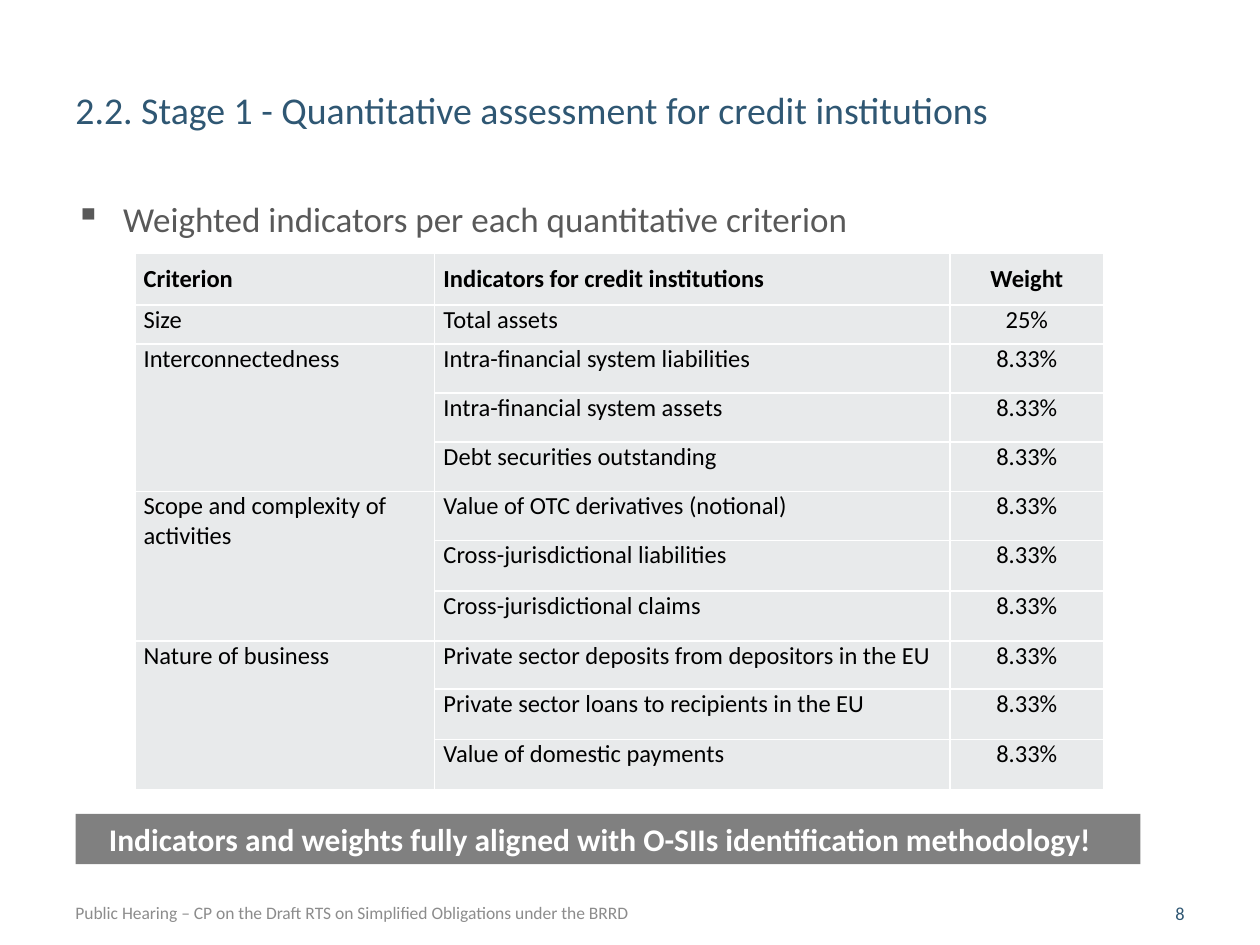
from dataclasses import dataclass

from lxml import etree
from pptx import Presentation
from pptx.dml.color import RGBColor
from pptx.enum import shapes, text
from pptx.oxml import ns
from pptx.util import Inches, Pt

FONT = "Calibri"
NAVY = RGBColor(0x2F, 0x57, 0x73)
DARK_GREY = RGBColor(0x59, 0x59, 0x59)
FOOTER_GREY = RGBColor(0x8C, 0x8C, 0x8C)
BAR_GREY = RGBColor(0x80, 0x80, 0x80)
CELL_GREY = RGBColor(0xE8, 0xEA, 0xEB)
WHITE = RGBColor(0xFF, 0xFF, 0xFF)
BLACK = RGBColor(0, 0, 0)
LEFT, CENTER, RIGHT = text.PP_ALIGN.LEFT, text.PP_ALIGN.CENTER, text.PP_ALIGN.RIGHT


@dataclass
class Label:
    words: str
    left: float
    top: float
    width: float
    height: float
    size: float
    color: RGBColor
    align: text.PP_ALIGN = LEFT


@dataclass
class Criterion:
    name: str
    indicators: list[str]
    weight: str = "8.33%"


TITLE = Label("2.2. Stage 1 - Quantitative assessment for credit institutions",
              0.5, 0.64, 8.15, 0.61, 21.6, NAVY)
LEAD = Label("Weighted indicators per each quantitative criterion",
             0.5, 1.5, 9, 0.5, 20, DARK_GREY)
FOOTER = Label("Public Hearing – CP on the Draft RTS on Simplified Obligations under the BRRD",
               0.5, 7.11, 5.38, 0.24, 10, FOOTER_GREY)
PAGE_NUMBER = Label("8", 8.65, 7.11, 0.85, 0.24, 10.5, NAVY, RIGHT)

HEADINGS = ["Criterion", "Indicators for credit institutions", "Weight"]
CRITERIA = [
    Criterion("Size", ["Total assets"], "25%"),
    Criterion("Interconnectedness", [
        "Intra-financial system liabilities",
        "Intra-financial system assets",
        "Debt securities outstanding"]),
    Criterion("Scope and complexity of activities", [
        "Value of OTC derivatives (notional)",
        "Cross-jurisdictional liabilities",
        "Cross-jurisdictional claims"]),
    Criterion("Nature of business", [
        "Private sector deposits from depositors in the EU",
        "Private sector loans to recipients in the EU",
        "Value of domestic payments"]),
]
COLUMN_WIDTHS = [2.38, 4.09, 1.22]
ROW_HEIGHTS = [0.41, 0.31] + [0.39] * 4 + [0.4, 0.4, 0.38, 0.4, 0.4]


def style(paragraph, size: float, color: RGBColor, bold: bool = False, align=LEFT) -> None:
    paragraph.alignment = align
    font = paragraph.font
    font.name, font.size, font.bold = FONT, Pt(size), bold
    font.color.rgb = color


def add_label(slide, label: Label):
    box = slide.shapes.add_textbox(Inches(label.left), Inches(label.top),
                                   Inches(label.width), Inches(label.height))
    box.text_frame.word_wrap = True
    paragraph = box.text_frame.paragraphs[0]
    paragraph.text = label.words
    style(paragraph, label.size, label.color, align=label.align)
    return paragraph


def add_bulleted_label(slide, label: Label) -> None:
    paragraph = add_label(slide, label)
    paragraph.line_spacing = 1.05
    properties = paragraph._p.get_or_add_pPr()
    properties.set("marL", str(Inches(0.38)))
    properties.set("indent", str(-Inches(0.38)))
    bullet = etree.Element(ns.qn("a:buChar"), char="▪")
    properties.find(ns.qn("a:defRPr")).addprevious(bullet)


def add_borders(cell) -> None:
    properties = cell._tc.get_or_add_tcPr()
    for position, side in enumerate(("lnL", "lnR", "lnT", "lnB")):
        line = etree.Element(ns.qn(f"a:{side}"), w=str(Pt(1)))
        fill = etree.SubElement(line, ns.qn("a:solidFill"))
        etree.SubElement(fill, ns.qn("a:srgbClr"), val=str(WHITE))
        properties.insert(position, line)


def fill_cell(cell, words: str, heading: bool, align) -> None:
    cell.fill.solid()
    cell.fill.fore_color.rgb = CELL_GREY
    cell.margin_left = cell.margin_right = Inches(0.07)
    cell.margin_top = cell.margin_bottom = 0
    cell.vertical_anchor = text.MSO_ANCHOR.MIDDLE if heading else text.MSO_ANCHOR.TOP
    paragraph = cell.text_frame.paragraphs[0]
    paragraph.text = words
    style(paragraph, 14, BLACK, heading, align)
    add_borders(cell)


def add_criteria_table(slide) -> None:
    rows = [HEADINGS]
    for criterion in CRITERIA:
        for i, indicator in enumerate(criterion.indicators):
            rows.append([criterion.name if i == 0 else "", indicator, criterion.weight])

    table = slide.shapes.add_table(
        len(rows), len(HEADINGS), Inches(1.07), Inches(2.01),
        Inches(sum(COLUMN_WIDTHS)), Inches(sum(ROW_HEIGHTS))).table
    for column, width in zip(table.columns, COLUMN_WIDTHS):
        column.width = Inches(width)
    for row, height in zip(table.rows, ROW_HEIGHTS):
        row.height = Inches(height)
    for r, row in enumerate(rows):
        for c, words in enumerate(row):
            fill_cell(table.cell(r, c), words, r == 0, CENTER if c == 2 else LEFT)

    # Each criterion spans the rows of its indicators
    first = 1
    for criterion in CRITERIA:
        last = first + len(criterion.indicators) - 1
        if last > first:
            table.cell(first, 0).merge(table.cell(last, 0))
        first = last + 1


def add_conclusion(slide) -> None:
    bar = slide.shapes.add_shape(shapes.MSO_SHAPE.RECTANGLE, Inches(0.6), Inches(6.46),
                                 Inches(8.45), Inches(0.4))
    bar.shadow.inherit = False
    bar.fill.solid()
    bar.fill.fore_color.rgb = BAR_GREY
    bar.line.fill.background()
    frame = bar.text_frame
    frame.word_wrap = True
    frame.margin_right = Inches(0.22)
    frame.vertical_anchor = text.MSO_ANCHOR.MIDDLE
    paragraph = frame.paragraphs[0]
    paragraph.text = "Indicators and weights fully aligned with O-SIIs identification methodology!"
    style(paragraph, 18, WHITE, True, CENTER)


def main() -> None:
    deck = Presentation()
    deck.slide_width, deck.slide_height = Inches(10), Inches(7.5)
    slide = deck.slides.add_slide(deck.slide_layouts[6])

    # Title, lead line and footer
    add_label(slide, TITLE)
    add_bulleted_label(slide, LEAD)
    add_label(slide, FOOTER)
    add_label(slide, PAGE_NUMBER)

    # Criteria and the conclusion below them
    add_criteria_table(slide)
    add_conclusion(slide)
    deck.save("out.pptx")


if __name__ == "__main__":
    main()
